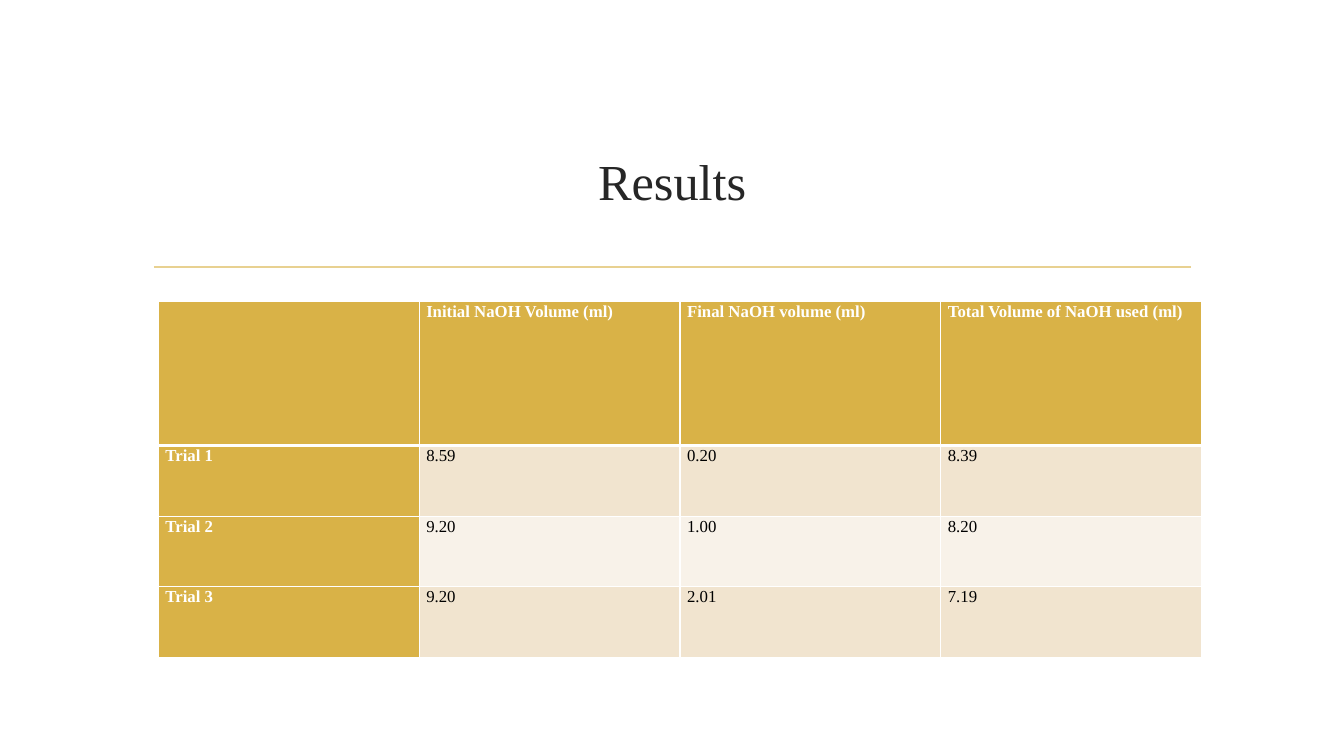
from lxml import etree
from pptx import Presentation
from pptx.dml.color import RGBColor
from pptx.enum.shapes import MSO_CONNECTOR
from pptx.enum.text import MSO_ANCHOR, PP_ALIGN
from pptx.oxml.ns import qn
from pptx.util import Pt

STRAIGHT = MSO_CONNECTOR.STRAIGHT
MIDDLE = MSO_ANCHOR.MIDDLE
CENTER = PP_ALIGN.CENTER

FONT = "Times New Roman"
COLORS = {
    "title": "262626",
    "rule": "E8D191",
    "gold": "D9B247",
    "band_dark": "F1E4CF",
    "band_light": "F8F2E9",
    "white": "FFFFFF",
    "black": "000000",
}
RESULTS = [
    ["", "Initial NaOH Volume (ml)", "Final NaOH volume (ml)", "Total Volume of NaOH used (ml)"],
    ["Trial 1", "8.59", "0.20", "8.39"],
    ["Trial 2", "9.20", "1.00", "8.20"],
    ["Trial 3", "9.20", "2.01", "7.19"],
]
COLUMN_WIDTH = 186.3
HEADER_HEIGHT = 103
TRIAL_HEIGHT = 50.4


def color(name):
    return RGBColor.from_string(COLORS[name])


def style_font(para, size, color_name, bold=False):
    para.font.name = FONT
    para.font.size = Pt(size)
    para.font.bold = bold
    para.font.color.rgb = color(color_name)


def add_title(page, text):
    box = page.shapes.add_textbox(Pt(102.2), Pt(77), Pt(756), Pt(103))
    frame = box.text_frame
    frame.word_wrap = True
    frame.vertical_anchor = MIDDLE
    para = frame.paragraphs[0]
    para.text = text
    para.alignment = CENTER
    style_font(para, 36, "title")


def add_rule(page, left, right, top):
    rule = page.shapes.add_connector(STRAIGHT, Pt(left), Pt(top), Pt(right), Pt(top))
    rule.line.color.rgb = color("rule")
    rule.line.width = Pt(1.25)
    etree.SubElement(rule._element.spPr, qn("a:effectLst"))


def set_borders(cell, widths):
    properties = cell._tc.get_or_add_tcPr()
    for index, (side, width) in enumerate(widths.items()):
        border = etree.Element(qn(f"a:ln{side}"), w=str(Pt(width)))
        fill = etree.SubElement(border, qn("a:solidFill"))
        etree.SubElement(fill, qn("a:srgbClr"), val=COLORS["white"])
        properties.insert(index, border)


def fill_cell(cell, text, row, column):
    is_heading = row == 0 or column == 0
    band = "band_dark" if row % 2 else "band_light"
    cell.fill.solid()
    cell.fill.fore_color.rgb = color("gold" if is_heading else band)
    cell.margin_left = cell.margin_right = Pt(5)
    cell.margin_top = cell.margin_bottom = Pt(0)
    para = cell.text_frame.paragraphs[0]
    para.text = text
    para.line_spacing = 1.07
    style_font(para, 12, "white" if is_heading else "black", is_heading)
    set_borders(cell, {"L": 1, "R": 1, "T": 3 if row == 1 else 1, "B": 3 if row == 0 else 1})


def add_results_table(page, left, top):
    heights = [HEADER_HEIGHT] + [TRIAL_HEIGHT] * (len(RESULTS) - 1)
    column_count = len(RESULTS[0])
    table = page.shapes.add_table(
        len(RESULTS), column_count, Pt(left), Pt(top),
        Pt(COLUMN_WIDTH * column_count), Pt(sum(heights)),
    ).table
    table.first_col = True
    for column in table.columns:
        column.width = Pt(COLUMN_WIDTH)
    for row, (height, values) in enumerate(zip(heights, RESULTS)):
        table.rows[row].height = Pt(height)
        for column, text in enumerate(values):
            fill_cell(table.cell(row, column), text, row, column)


def main():
    deck = Presentation()
    deck.slide_width = Pt(960)
    deck.slide_height = Pt(540)
    page = deck.slides.add_slide(deck.slide_layouts[6])
    add_rule(page, 110, 850.5, 190.8)
    add_title(page, "Results")
    add_results_table(page, 113.2, 215.3)
    deck.save("out.pptx")


if __name__ == "__main__":
    main()
